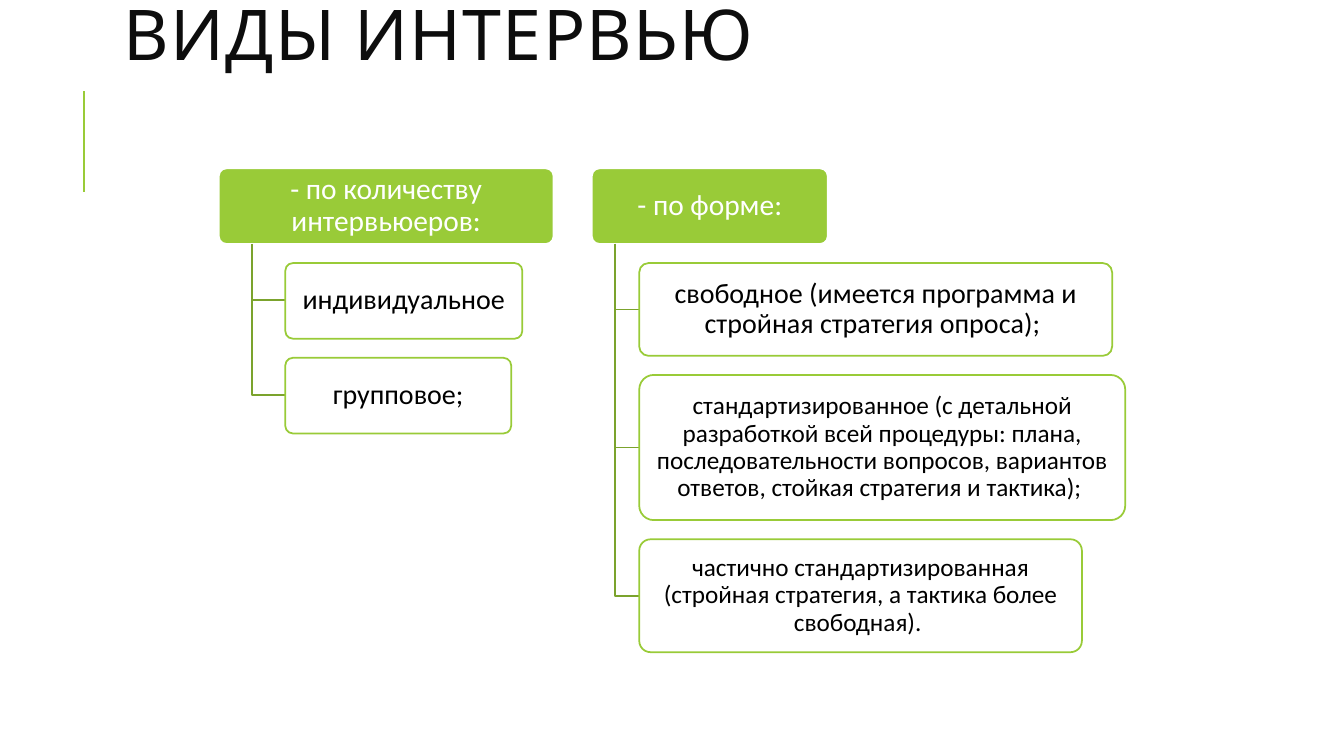
from pptx import Presentation
from pptx.dml.color import RGBColor
from pptx.enum.shapes import MSO_CONNECTOR, MSO_SHAPE
from pptx.enum.text import MSO_ANCHOR, PP_ALIGN
from pptx.oxml.ns import qn
from pptx.util import Pt
from lxml.etree import SubElement

TITLE = "ВИДЫ ИНТЕРВЬЮ"
GROUPS = [
    {"head": "- по количеству интервьюеров:", "left": 217, "width": 332,
     "kinds": [
         ("индивидуальное", 235, 75, 20),
         ("групповое;", 224, 75, 20),
     ]},
    {"head": "- по форме:", "left": 587, "width": 234,
     "kinds": [
         ("свободное (имеется программа и стройная стратегия опроса); ",
          469, 92, 20),
         ("стандартизированное (с детальной разработкой всей процедуры: "
          "плана, последовательности вопросов, вариантов ответов, "
          "стойкая стратегия и тактика); ", 482, 144, 18),
         ("частично стандартизированная (стройная стратегия, "
          "а тактика более свободная). ", 439, 112, 18),
     ]},
]

PX = 9144
TOP, HEAD, GAP = 167, 75, 19
GREEN = RGBColor(0x99, 0xCB, 0x38)
DARK = RGBColor(0x7B, 0xA3, 0x2D)
WHITE = RGBColor(0xFF, 0xFF, 0xFF)
BLACK = RGBColor(0, 0, 0)
INK = RGBColor(0x0D, 0x0D, 0x0D)


def px(*nums):
    return [round(n * PX) for n in nums]


def style(para, face, size, color, space):
    para.font.name = face
    para.font.size = Pt(size)
    para.font.color.rgb = color
    para.line_spacing = space


def add_title(slide):
    box = slide.shapes.add_textbox(*px(113, 1, 1063, 79))
    frame = box.text_frame
    frame.word_wrap = True
    frame.vertical_anchor = MSO_ANCHOR.MIDDLE
    para = frame.paragraphs[0]
    run = para.add_run()
    run.text = TITLE
    style(para, "Cabin", 50, INK, 0.8)
    run.font._element.set("spc", "100")


def add_accent(slide):
    x, low, high = px(83, 190, 90)
    line = slide.shapes.add_connector(MSO_CONNECTOR.STRAIGHT, x, low, x, high)
    line.line.color.rgb = GREEN
    line.line.width = Pt(1.5)
    SubElement(line._element.spPr, qn("a:effectLst"))


def add_box(slide, text, rect, fill, edge, color, size):
    box = slide.shapes.add_shape(MSO_SHAPE.ROUNDED_RECTANGLE, *px(*rect))
    box.adjustments[0] = 0.1
    box.shadow.inherit = False
    box.fill.solid()
    box.fill.fore_color.rgb = fill
    box.line.color.rgb = edge
    box.line.width = Pt(1.25)
    frame = box.text_frame
    frame.word_wrap = True
    frame.vertical_anchor = MSO_ANCHOR.MIDDLE
    frame.margin_left, frame.margin_right = px(4, 4)
    frame.margin_top, frame.margin_bottom = px(3, 3)
    frame.text = text
    para = frame.paragraphs[0]
    para.alignment = PP_ALIGN.CENTER
    style(para, "Calibri", size, color, 0.9)


def add_branch(slide, trunk, start, left, mid):
    pen = slide.shapes.build_freeform(trunk, start, PX)
    pen.add_line_segments([(trunk, mid), (left, mid)], close=False)
    branch = pen.convert_to_shape()
    branch.shadow.inherit = False
    branch.fill.background()
    branch.line.color.rgb = DARK
    branch.line.width = Pt(1.25)


def add_group(slide, group):
    left, width = group["left"], group["width"]
    add_box(slide, group["head"], (left, TOP, width, HEAD),
            GREEN, WHITE, WHITE, 21)
    trunk, inner = round(left + width * 0.1), round(left + width * 0.2)
    base = TOP + HEAD
    top = base + GAP
    for text, wide, high, size in group["kinds"]:
        add_branch(slide, trunk, base, inner, top + high / 2)
        add_box(slide, text, (inner, top, wide, high),
                WHITE, GREEN, BLACK, size)
        top += high + GAP


def main():
    deck = Presentation()
    deck.slide_width, deck.slide_height = px(1333, 750)
    slide = deck.slides.add_slide(deck.slide_layouts[6])
    add_accent(slide)
    add_title(slide)
    for group in GROUPS:
        add_group(slide, group)
    deck.save("out.pptx")


if __name__ == "__main__":
    main()
